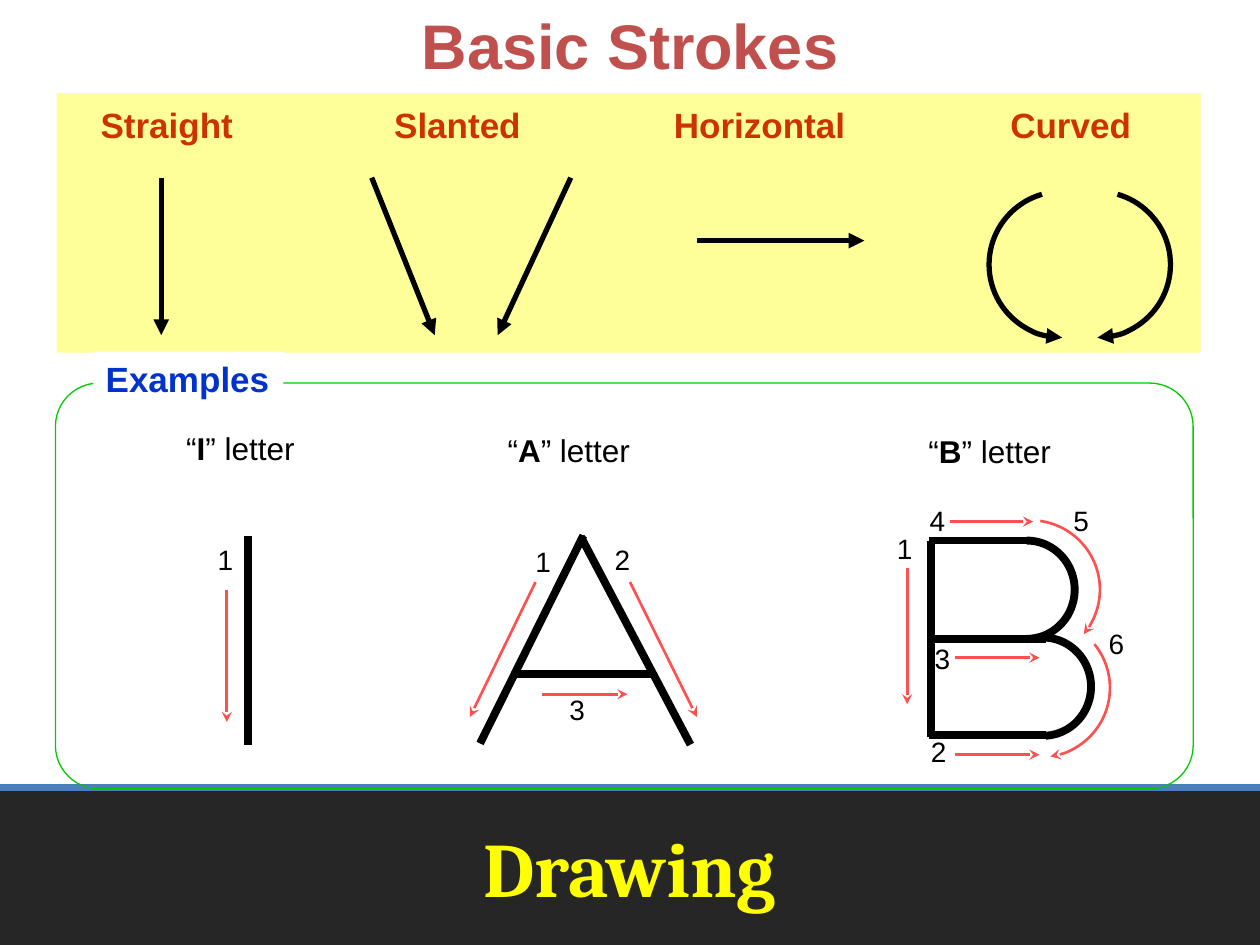
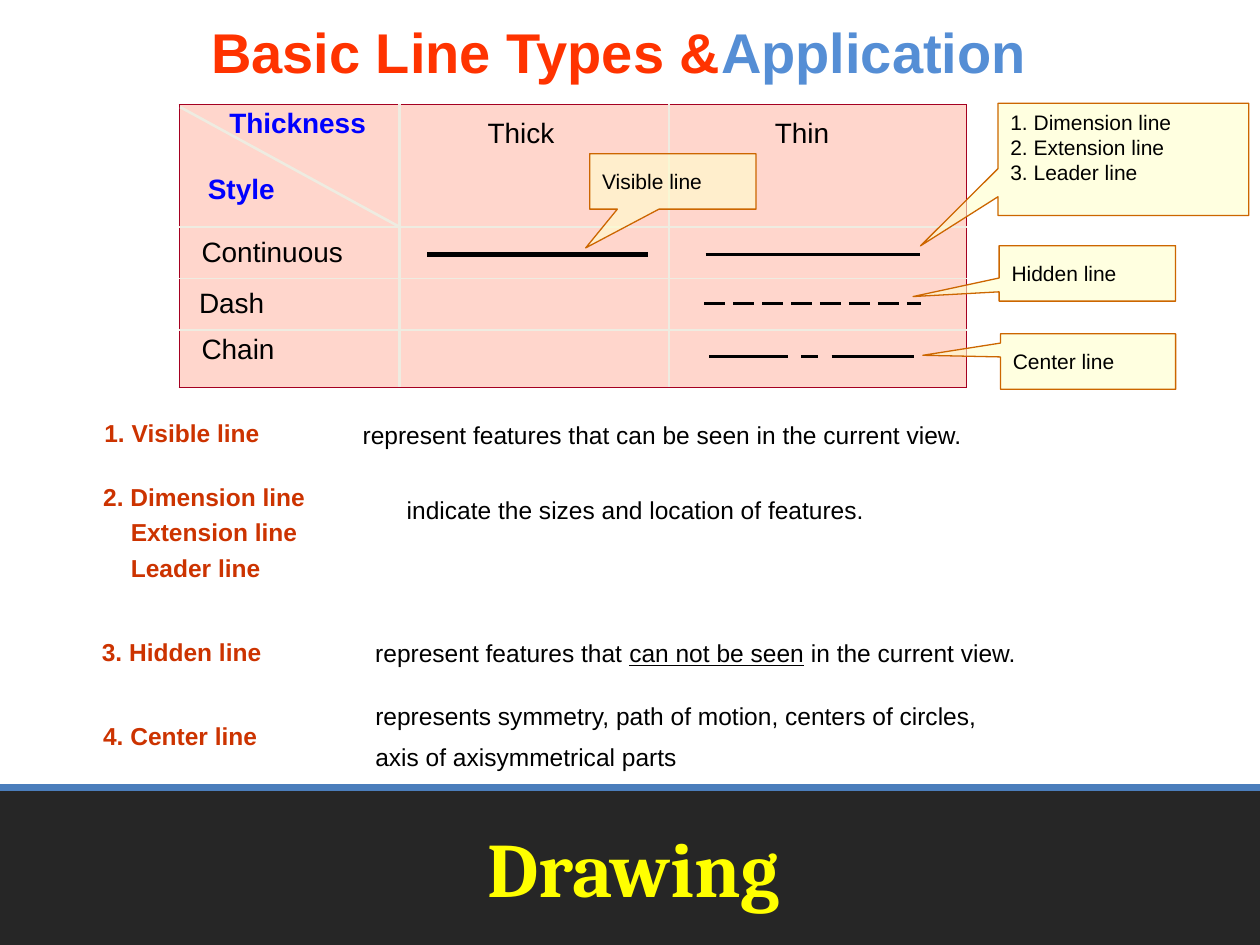
"""Builds two drawing lesson slides: basic strokes, and line types with their application."""
from dataclasses import dataclass, field
from typing import NamedTuple

from lxml.etree import SubElement
from pptx import Presentation
from pptx.dml.color import RGBColor
from pptx.enum.dml import MSO_LINE
from pptx.enum.shapes import MSO_CONNECTOR, MSO_SHAPE
from pptx.enum.text import MSO_ANCHOR, MSO_AUTO_SIZE, PP_ALIGN
from pptx.oxml.ns import qn
from pptx.util import Inches, Pt

WHITE = RGBColor(0xFF, 0xFF, 0xFF)
BLACK = RGBColor(0, 0, 0)
BAND = RGBColor(0x26, 0x26, 0x26)
BAND_EDGE = RGBColor(0x4B, 0x7E, 0xBC)
YELLOW = RGBColor(0xFF, 0xFF, 0)
PALE_YELLOW = RGBColor(0xFF, 0xFF, 0x99)
ROSE = RGBColor(0xC0, 0x50, 0x4D)
RUST = RGBColor(0xCC, 0x33, 0)
GUIDE_RED = RGBColor(0xFF, 0x50, 0x50)
GREEN = RGBColor(0, 0xCC, 0)
NAVY = RGBColor(0, 0x33, 0xCC)
BLUE = RGBColor(0, 0, 0xFF)
SKY = RGBColor(0x55, 0x8E, 0xD5)
ORANGE_RED = RGBColor(0xFF, 0x33, 0)
GRID_FILL = RGBColor(0xFF, 0xD6, 0xCC)
GRID_EDGE = RGBColor(0xA5, 0, 0x21)
GRID_LINE = RGBColor(0xEE, 0xEC, 0xE1)
CREAM = RGBColor(0xFF, 0xFF, 0xCC)
CALLOUT_EDGE = RGBColor(0xCC, 0x66, 0)


class Area(NamedTuple):
    left: float
    top: float
    width: float
    height: float


class Pen(NamedTuple):
    color: RGBColor
    width: float
    tail: str = ""
    head: str = ""
    dash: MSO_LINE | None = None


class Style(NamedTuple):
    size: float
    color: RGBColor = BLACK
    bold: bool = False
    name: str = "Arial"


class Piece(NamedTuple):
    text: str
    formats: dict = {}


@dataclass
class Line:
    pieces: list[Piece]
    indent: float = 0
    format: dict = field(default_factory=dict)


class Arc(NamedTuple):
    center: tuple[float, float]
    radii: tuple[float, float]
    start: float
    end: float
    pen: Pen


class Callout(NamedTuple):
    area: Area
    tip: tuple[float, float]
    texts: list[str]
    anchor: MSO_ANCHOR = MSO_ANCHOR.MIDDLE


STROKE = Pen(BLACK, 3, "triangle")
LETTER = Pen(BLACK, 4.5)
GUIDE = Pen(GUIDE_RED, 1.5, "stealth")
THICK = Pen(BLACK, 3)
THIN = Pen(BLACK, 1.5)
MAJOR, MINOR, OUTER = Pen(GRID_LINE, 1.5), Pen(GRID_LINE, 0.75), Pen(GRID_EDGE, 0.25)

HEADING = Style(20, RUST, True)
NUMBER = Style(16)
TERM = Style(14, RUST, True)
MEANING = Style(14)
LOOSE = {"line_spacing": 1.2}
SPACED = LOOSE | {"space_before": Pt(3)}


def inches(values) -> list:
    """Turn plain numbers into lengths."""
    return [Inches(value) for value in values]


def plain(text: str, **formats) -> Line:
    """Make a line of one piece."""
    return Line([Piece(text)], format=formats)


def write(frame, lines: list[Line], style: Style) -> None:
    """Fill a text frame with formatted paragraphs."""
    for index, line in enumerate(lines):
        para = frame.paragraphs[0] if index == 0 else frame.add_paragraph()
        for name, value in line.format.items():
            setattr(para, name, value)
        if line.indent:
            para._p.get_or_add_pPr().set("marL", str(Inches(line.indent)))
        for piece in line.pieces:
            span = para.add_run()
            span.text = piece.text
            formats = style._asdict() | piece.formats
            span.font.color.rgb = formats.pop("color")
            formats["size"] = Pt(formats["size"])
            for name, value in formats.items():
                setattr(span.font, name, value)


def ink(item, pen: Pen) -> None:
    """Give a shape or connector its line and arrowheads."""
    item.line.color.rgb = pen.color
    item.line.width = Pt(pen.width)
    if pen.dash is not None:
        item.line.dash_style = pen.dash
    outline = item.element.spPr.find(qn("a:ln"))
    for tag, kind in (("a:headEnd", pen.head), ("a:tailEnd", pen.tail)):
        if kind:
            SubElement(outline, qn(tag), type=kind)


def add_line(page, x1: float, y1: float, x2: float, y2: float, pen: Pen):
    """Draw a straight line."""
    line = page.shapes.add_connector(MSO_CONNECTOR.STRAIGHT, *inches((x1, y1, x2, y2)))
    ink(line, pen)
    SubElement(line.element.spPr, qn("a:effectLst"))
    return line


def add_block(page, area: Area, fill: RGBColor | None = None, pen: Pen | None = None,
              kind: MSO_SHAPE = MSO_SHAPE.RECTANGLE, adjust: tuple = ()):
    """Draw a preset shape."""
    block = page.shapes.add_shape(kind, *inches(area))
    block.shadow.inherit = False
    for index, value in enumerate(adjust):
        block.adjustments[index] = value
    if fill is None:
        block.fill.background()
    else:
        block.fill.solid()
        block.fill.fore_color.rgb = fill
    if pen is None:
        block.line.fill.background()
    else:
        ink(block, pen)
    return block


def add_text(page, area: Area, lines: list[Line], style: Style, wrap: bool = False,
             fill: RGBColor | None = None, anchor: MSO_ANCHOR = MSO_ANCHOR.TOP) -> None:
    """Place a text box."""
    box = page.shapes.add_textbox(*inches(area))
    if fill is not None:
        box.fill.solid()
        box.fill.fore_color.rgb = fill
    box.text_frame.word_wrap = wrap
    box.text_frame.vertical_anchor = anchor
    write(box.text_frame, lines, style)


def add_arc(page, arc: Arc) -> None:
    """Draw a clockwise arc between two angles in degrees."""
    (x, y), (rx, ry) = arc.center, arc.radii
    area = Area(x - rx, y - ry, 2 * rx, 2 * ry)
    add_block(page, area, pen=arc.pen, kind=MSO_SHAPE.ARC, adjust=(arc.start * 0.6, arc.end * 0.6))


def add_callout(page, callout: Callout) -> None:
    """Draw a translucent callout with left-aligned text."""
    block = add_block(page, callout.area, CREAM, Pen(CALLOUT_EDGE, 0.75),
                      MSO_SHAPE.RECTANGULAR_CALLOUT, callout.tip)
    color = block.element.spPr.find(qn("a:solidFill")).find(qn("a:srgbClr"))
    SubElement(color, qn("a:alpha"), val="60000")
    block.text_frame.vertical_anchor = callout.anchor
    write(block.text_frame, [plain(text, alignment=PP_ALIGN.LEFT) for text in callout.texts], Style(12))


def add_band(deck, layout) -> None:
    """Put the dark footer band on the shared layout."""
    page = deck.slides[0]
    parts = (add_block(page, Area(0, 6.25, 10, 1.25), BAND),
             add_line(page, 0, 6.25, 10, 6.25, Pen(BAND_EDGE, 4)))
    for part in parts:
        layout.shapes.element.append(part.element)


def set_title(page, left: float) -> None:
    """Move the title into the footer band and format it."""
    title = page.shapes.title
    place = dict(zip(("left", "top", "width", "height"), inches((left, 6.25, 9, 1.25))))
    for name, value in place.items():
        setattr(title, name, value)
    title.text_frame.auto_size = MSO_AUTO_SIZE.NONE
    title.text_frame.vertical_anchor = MSO_ANCHOR.MIDDLE
    write(title.text_frame, [plain("Drawing", alignment=PP_ALIGN.CENTER)], Style(44, YELLOW, True, "Cambria"))


def draw_strokes(page) -> None:
    """Build the slide of basic strokes and letter examples."""
    add_block(page, Area(0.45, 0.74, 9.08, 2.06), PALE_YELLOW)
    add_text(page, Area(0.75, 0, 8.5, 1.25), [plain("Basic Strokes", alignment=PP_ALIGN.CENTER)],
             Style(36, ROSE, True), wrap=True)
    for text, left, width in (("Straight", 0.7, 1.26), ("Slanted", 3.03, 1.22),
                              ("Horizontal", 5.25, 1.57), ("Curved", 7.92, 1.17)):
        add_text(page, Area(left, 0.77, width, 0.44), [plain(text)], HEADING)
    lines = {
        STROKE: [(1.28, 1.41, 1.28, 2.66), (2.95, 1.41, 3.45, 2.66), (4.53, 1.41, 3.95, 2.66),
                 (5.53, 1.91, 6.86, 1.91)],
        LETTER: [(1.97, 4.25, 1.97, 5.91), (4.63, 4.25, 3.81, 5.9), (4.61, 4.26, 5.48, 5.91),
                 (4.09, 5.35, 5.17, 5.35), (7.39, 4.29, 7.39, 5.85), (7.37, 5.83, 8.3, 5.83),
                 (7.37, 5.07, 8.3, 5.07), (7.37, 4.29, 8.18, 4.29)],
        GUIDE: [(1.8, 4.68, 1.8, 5.73), (4.25, 4.62, 3.73, 5.69), (5, 4.62, 5.53, 5.69),
                (4.3, 5.51, 4.98, 5.51), (7.2, 4.51, 7.2, 5.59), (7.58, 5.99, 8.25, 5.99),
                (7.58, 5.22, 8.25, 5.22), (7.54, 4.14, 8.2, 4.14)],
    }
    for pen, ends in lines.items():
        for end in ends:
            add_line(page, *end, pen)
    for arc in (Arc((8.43, 2.1), (0.58, 0.58), 90, 254, Pen(BLACK, 3, head="triangle")),
                Arc((8.71, 2.1), (0.58, 0.58), 286, 90, STROKE),
                Arc((8.15, 4.68), (0.38, 0.39), 270, 90, LETTER),
                Arc((8.28, 5.45), (0.38, 0.39), 270, 87, LETTER),
                Arc((8.18, 4.68), (0.55, 0.55), 278, 40, GUIDE),
                Arc((8.26, 5.46), (0.55, 0.55), 321, 82, GUIDE)):
        add_arc(page, arc)
    for number, left, top in (("1", 1.63, 4.26), ("1", 4.15, 4.27), ("2", 4.78, 4.26), ("3", 4.42, 5.45),
                              ("1", 7.02, 4.17), ("2", 7.29, 5.78), ("3", 7.32, 5.04), ("4", 7.28, 3.95),
                              ("5", 8.42, 3.95), ("6", 8.7, 4.92)):
        add_text(page, Area(left, top, 0.33, 0.37), [plain(number)], NUMBER)
    for letter, left, top, width in (("I", 1.38, 3.36, 1.07), ("A", 3.93, 3.37, 1.18), ("B", 7.27, 3.38, 1.18)):
        pieces = [Piece("“"), Piece(letter, {"bold": True}), Piece("” letter")]
        add_text(page, Area(left, top, width, 0.4), [Line(pieces)], Style(18))
    add_block(page, Area(0.44, 3.04, 9.03, 3.22), pen=Pen(GREEN, 0.75),
              kind=MSO_SHAPE.ROUNDED_RECTANGLE, adjust=(0.107,))
    add_text(page, Area(0.74, 2.79, 1.51, 0.44), [plain("Examples")], Style(20, NAVY, True), fill=WHITE)


def set_borders(cell, pens: dict[str, Pen]) -> None:
    """Draw the four borders of a cell."""
    properties = cell._tc.get_or_add_tcPr()
    for index, (side, pen) in enumerate(pens.items()):
        edge = SubElement(properties, qn(f"a:ln{side}"), w=str(Pt(pen.width)))
        SubElement(SubElement(edge, qn("a:solidFill")), qn("a:srgbClr"), val=str(pen.color))
        properties.insert(index, edge)


def add_type_table(page) -> None:
    """Add the table of line styles against thickness."""
    widths, heights = (1.75, 2.14, 2.36), (0.97, 0.41, 0.41, 0.45)
    corner = [Line([Piece("Thickness")], 0.4), Line([Piece("Style")], 0.23, {"space_before": Pt(20)})]
    contents = {(0, 0): (corner, 0, 0.03), (0, 1): ([plain("Thick")], 0.7, 0.11),
                (0, 2): ([plain("Thin")], 0.84, 0.11), (1, 0): ([plain("Continuous")], 0.18, 0.08),
                (2, 0): ([plain("Dash")], 0.16, 0.08), (3, 0): ([plain("Chain")], 0.18, 0.03)}
    table = page.shapes.add_table(4, 3, *inches((1.42, 0.83, sum(widths), sum(heights)))).table
    table.first_row = table.horz_banding = False
    for column, width in zip(table.columns, widths):
        column.width = Inches(width)
    for row, height in zip(table.rows, heights):
        row.height = Inches(height)
    across = (OUTER, MAJOR, MINOR, OUTER)
    down = (OUTER, MAJOR, MINOR, MINOR, OUTER)
    for r in range(4):
        for c in range(3):
            cell = table.cell(r, c)
            lines, left, top = contents.get((r, c), ([], 0, 0))
            for name, value in {"left": left, "top": top, "right": 0, "bottom": 0}.items():
                setattr(cell, f"margin_{name}", Inches(value))
            cell.fill.solid()
            cell.fill.fore_color.rgb = GRID_FILL
            set_borders(cell, {"L": across[c], "R": across[c + 1], "T": down[r], "B": down[r + 1]})
            write(cell.text_frame, lines, Style(16, BLUE, True) if lines is corner else Style(16))


def draw_line_types(page) -> None:
    """Build the slide of line types and their application."""
    heading = Line([Piece("Basic Line Types &"), Piece("Application", {"color": SKY})],
                   format={"alignment": PP_ALIGN.CENTER})
    add_text(page, Area(0.3, 0, 9.22, 0.81), [heading], Style(32, ORANGE_RED, True),
             wrap=True, anchor=MSO_ANCHOR.MIDDLE)
    add_type_table(page)
    add_line(page, 3.17, 1.8, 1.43, 0.85, MAJOR)
    for x1, x2, y, pen in ((3.39, 5.14, 2.02, THICK), (5.6, 7.3, 2.02, THIN),
                           (5.59, 7.31, 2.41, THIN._replace(dash=MSO_LINE.LONG_DASH)),
                           (5.63, 6.25, 2.83, THIN), (6.36, 6.49, 2.83, THIN), (6.6, 7.25, 2.83, THIN)):
        add_line(page, x1, y, x2, y, pen)
    dimension_lines = ["1. Dimension line", "2. Extension line", "3. Leader line"]
    for callout in (Callout(Area(7.92, 0.82, 1.99, 0.89), (-0.809, 0.771), dimension_lines, MSO_ANCHOR.TOP),
                    Callout(Area(7.94, 2.65, 1.39, 0.44), (-0.943, -0.113), ["Center line"]),
                    Callout(Area(7.93, 1.95, 1.4, 0.44), (-0.988, 0.418), ["Hidden line"]),
                    Callout(Area(4.68, 1.22, 1.32, 0.44), (-0.524, 1.199), ["Visible line"])):
        add_callout(page, callout)
    unseen = Line([Piece("represent features that "), Piece("can not be seen", {"underline": True}),
                   Piece(" in the current view.")], format=SPACED)
    symmetry = [plain(text, **SPACED) for text in
                ("represents symmetry, path of motion, centers of circles,", "axis of axisymmetrical parts")]
    dimensions = [plain("2. Dimension line", **LOOSE)]
    dimensions += [Line([Piece(text)], 0.22, LOOSE) for text in ("Extension line", "Leader line")]
    seen = plain("represent features that can be seen in the current view.", **SPACED)
    sizes = plain("indicate the sizes and location of features.", **LOOSE)
    for area, lines, style, wrap in (
            (Area(2.78, 3.24, 6.46, 0.38), [seen], MEANING, True),
            (Area(2.88, 4.97, 5.3, 0.38), [unseen], MEANING, False),
            (Area(2.88, 5.47, 4.99, 0.71), symmetry, MEANING, False),
            (Area(3.13, 3.83, 5.06, 0.38), [sizes], MEANING, True),
            (Area(0.73, 3.22, 1.95, 0.38), [plain("1. Visible line", **SPACED)], TERM, True),
            (Area(0.71, 4.96, 1.47, 0.38), [plain("3. Hidden line", **SPACED)], TERM, False),
            (Area(0.72, 5.63, 1.43, 0.38), [plain("4. Center line", **SPACED)], TERM, False),
            (Area(0.72, 3.73, 2.35, 0.95), dimensions, TERM, True)):
        add_text(page, area, lines, style, wrap, WHITE)


def main() -> None:
    """Build and save the deck."""
    deck = Presentation()
    deck.slide_width, deck.slide_height = Inches(10), Inches(7.5)
    layout = deck.slide_layouts[5]
    for draw, title_left in ((draw_strokes, 0.5), (draw_line_types, 0.53)):
        page = deck.slides.add_slide(layout)
        set_title(page, title_left)
        draw(page)
    add_band(deck, layout)
    deck.save("out.pptx")


if __name__ == "__main__":
    main()
